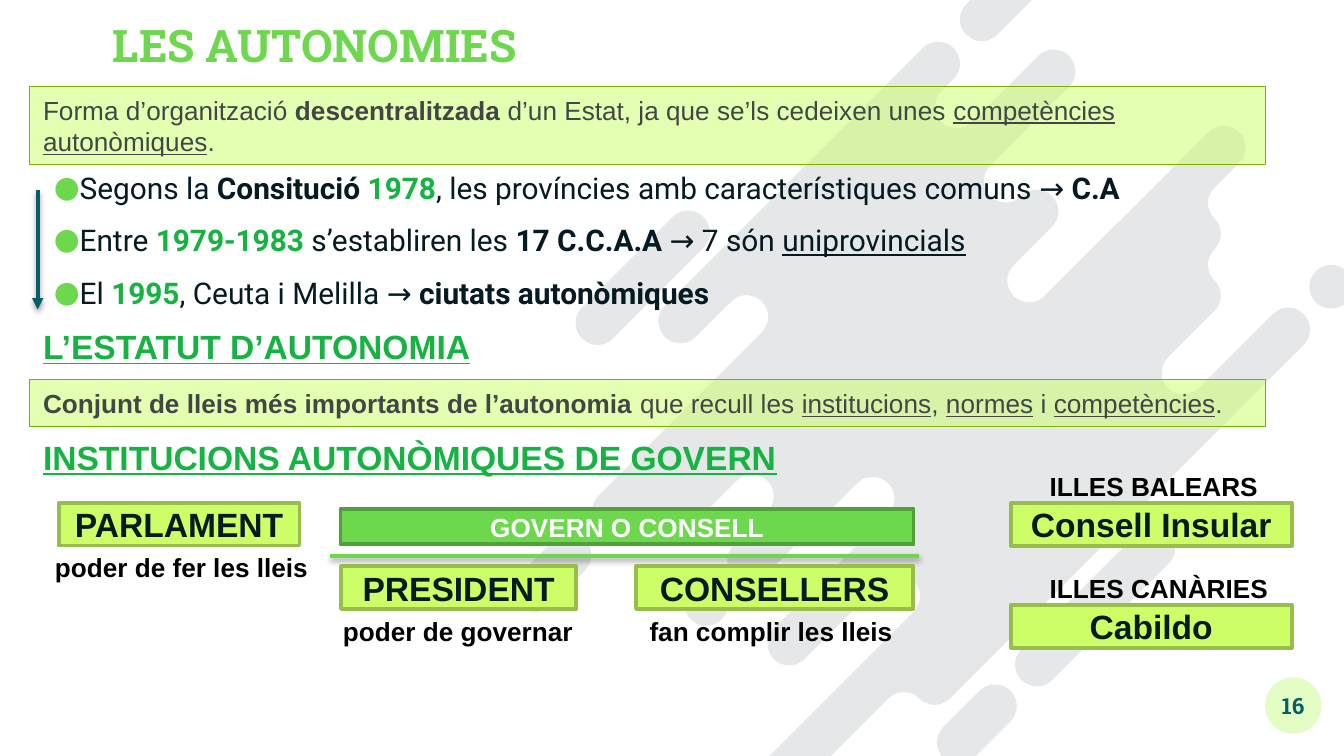
"""Build the slide about the Spanish autonomous communities."""
import pptx
import pptx.dml.color
import pptx.enum.shapes
import pptx.enum.text
import pptx.oxml
import pptx.oxml.ns
import pptx.util

Pt = pptx.util.Pt
SHAPE = pptx.enum.shapes.MSO_SHAPE
ALIGN = pptx.enum.text.PP_ALIGN
ANCHOR = pptx.enum.text.MSO_ANCHOR
INK, GREY, TEAL, LEAF, GRASS = "061A22", "404746", "075E68", "6DD84D", "17B342"
LIME, OLIVE, MOSS = "CCFF67", "97BD4C", "77B300"

DEFINITIONS = [
    (46.3, 41.8, [("Forma d’organització ", ""), ("descentralitzada", "b"),
                  (" d’un Estat, ja que se’ls cedeixen unes ", ""),
                  ("competències autonòmiques", "u"), (".", "")]),
    (203.5, 25, [("Conjunt de lleis més importants de l’autonomia", "b"),
                 (" que recull les ", ""), ("institucions", "u"), (", ", ""),
                 ("normes", "u"), (" i ", ""), ("competències", "u"), (".", "")]),
]
HISTORY = [
    [("Segons la ", ""), ("Consitució ", "b"), ("1978", "bg"),
     (", les províncies amb característiques comuns → ", ""), ("C.A", "b")],
    [("Entre ", ""), ("1979-1983", "bg"), (" s’establiren les ", ""),
     ("17 C.C.A.A", "b"), (" → 7 són ", ""), ("uniprovincials", "u")],
    [("El ", ""), ("1995", "bg"), (", Ceuta i Melilla → ", ""),
     ("ciutats autonòmiques", "b")],
]
HEADINGS = [
    ("L’ESTATUT D’AUTONOMIA", 171.2, 250),
    ("INSTITUCIONS AUTONÒMIQUES DE GOVERN", 230.5, 412.5),
]
INSTITUTIONS = [
    ("PARLAMENT", 31.5, 269.3, 129),
    ("PRESIDENT", 182.7, 303.3, 126),
    ("CONSELLERS", 340.7, 303.3, 148.5),
    ("Consell Insular", 541.5, 269.4, 150.5),
    ("Cabildo", 541.5, 324, 150.5),
]
CAPTIONS = [
    ("poder de fer les lleis", 22.3, 292, 150.5),
    ("poder de governar", 176.6, 326.4, 138.2),
    ("fan complir les lleis", 340.9, 326.4, 151.2),
    ("ILLES BALEARS", 555.3, 248.7, 126.7),
    ("ILLES CANÀRIES", 555.3, 303.3, 132.5),
]

CAPSULES = [
    (704.9, 145.4, 0), (505.4, 389.5, 19.4), (370.1, 315.4, 0), (547.2, 347.8, 62.6),
    (277.9, 308.2, 19), (311.8, 164.9, 48.6), (517.7, 2.2, 27.4),
]
SPLASH = (373.2, 180, [
    (18.4, "RR"), (87.5, "LL"), (6.5, "RL"), (18, "RR"), (18, "LL"), (49.7, "RR"),
    (61.2, "LL"), (41.8, "RR"), (84.6, "LL"), (54.7, "RL"), (189.4, "LL"),
    (39.6, "RR"), (24.8, "LRLR"), (13.3, "LL"), (87.8, "RR"), (20.5, "LLRR"),
    (42.1, "LL"), (35.3, "RR"), (6.5, "LL"), (138.2, "LL"),
])
HALF_CHORD, HANDLE = 8.25, 4.6

deck = pptx.Presentation()
deck.slide_width, deck.slide_height = Pt(720), Pt(405)
page = deck.slides.add_slide(deck.slide_layouts[6])


def rgb(value):
    """Turn a hex string into a colour."""
    return pptx.dml.color.RGBColor.from_string(value)


def parse(xml):
    """Read drawing elements from a fragment."""
    return list(pptx.oxml.parse_xml(f'<a:x {pptx.oxml.ns.nsdecls("a")}>{xml}</a:x>'))


def paint(shape, fill, line=None, width=2, alpha=None):
    """Give a shape its fill, outline and transparency."""
    shape.shadow.inherit = False
    shape.fill.solid()
    shape.fill.fore_color.rgb = rgb(fill)
    if alpha:
        colour = shape.fill._xPr.find(".//" + pptx.oxml.ns.qn("a:srgbClr"))
        colour.extend(parse(f'<a:alpha val="{alpha * 1000}"/>'))
    if line:
        shape.line.color.rgb = rgb(line)
        shape.line.width = Pt(width)
    else:
        shape.line.fill.background()


def write(para, spans, size, color, font="Arial", align=ALIGN.LEFT):
    """Fill a paragraph with runs flagged b, u or g for bold, underlined, green."""
    para.alignment = align
    for text, flags in spans:
        span = para.add_run()
        span.text = text
        span.font.name, span.font.size = font, Pt(size)
        span.font.bold, span.font.underline = "b" in flags, "u" in flags
        span.font.color.rgb = rgb(GRASS if "g" in flags else color)


def add_box(place, fill, line=None, width=2, alpha=None, kind=SHAPE.RECTANGLE):
    """Add a painted shape and return it with its text centred vertically."""
    box = page.shapes.add_shape(kind, *map(Pt, place))
    paint(box, fill, line, width, alpha)
    box.text_frame.vertical_anchor = ANCHOR.MIDDLE
    return box


def add_text(place, wrap=False, inset=True):
    """Add a text box and return its frame."""
    frame = page.shapes.add_textbox(*map(Pt, place)).text_frame
    frame.word_wrap = wrap
    if not inset:
        frame.margin_left = frame.margin_right = frame.margin_top = frame.margin_bottom = 0
    return frame


def add_line(ends, color, arrow=False):
    """Add a straight line with a soft shadow below it."""
    line = page.shapes.add_connector(pptx.enum.shapes.MSO_CONNECTOR.STRAIGHT, *map(Pt, ends))
    line.line.color.rgb = rgb(color)
    line.line.width = Pt(2)
    if arrow:
        line.line._get_or_add_ln().extend(parse('<a:tailEnd type="triangle"/>'))
    line._element.spPr.extend(parse(
        '<a:effectLst><a:outerShdw blurRad="39370" dist="20320" dir="5400000" rotWithShape="0">'
        '<a:srgbClr val="000000"><a:alpha val="38000"/></a:srgbClr></a:outerShdw></a:effectLst>'))


def trace(x, y, steps):
    """Walk diagonals and quarter turns from up-right, listing knots with their handles."""
    knots, dx, dy = [((x, y), None)], 1, -1
    for length, turns in steps:
        x, y = x + dx * length, y + dy * length
        if length:
            knots.append(((x, y), None))
        for turn in turns:
            new_dx, new_dy = (-dy, dx) if turn == "R" else (dy, -dx)
            first = (x + dx * HANDLE, y + dy * HANDLE)
            x, y = x + (dx + new_dx) * HALF_CHORD, y + (dy + new_dy) * HALF_CHORD
            knots.append(((x, y), (first, (x - new_dx * HANDLE, y - new_dy * HANDLE))))
            dx, dy = new_dx, new_dy
    return knots


def add_outline(outlines):
    """Draw closed outlines as one freeform and bend its quarter turns."""
    contours = [[tuple(map(Pt, knot)) for knot, _ in outline] for outline in outlines]
    builder = page.shapes.build_freeform(*contours[0][0])
    for index, contour in enumerate(contours):
        if index:
            builder.move_to(*contour[0])
        builder.add_line_segments(contour[1:], close=True)
    shape = builder.convert_to_shape()
    handles = [pair for outline in outlines for _, pair in outline[1:]]
    segments = list(shape._element.iter(pptx.oxml.ns.qn("a:lnTo")))
    for segment, pair in zip(segments, handles):
        if pair:
            curve = parse("<a:cubicBezTo>" + "".join(
                f'<a:pt x="{Pt(x) - shape.left}" y="{Pt(y) - shape.top}"/>' for x, y in pair)
                + "</a:cubicBezTo>")[0]
            curve.append(segment[0])
            segment.getparent().replace(segment, curve)
    return shape


badge = add_box((677.7, 362.9, 30.2, 30.2), "E4FDC4", kind=SHAPE.OVAL)
badge.text_frame.margin_left = badge.text_frame.margin_right = 0
write(badge.text_frame.paragraphs[0], [("16", "b")], 12, TEAL, "Roboto Slab", ALIGN.CENTER)

capsules = [trace(x, y, [(length, "RR")] * 2) for x, y, length in CAPSULES]
paint(add_outline([trace(*SPLASH)] + capsules), INK, alpha=10)

title = add_text((60.5, 4, 547, 34.6), True, False)
title.vertical_anchor = ANCHOR.BOTTOM
title.paragraphs[0].line_spacing = 0.9
write(title.paragraphs[0], [("LES AUTONOMIES", "b")], 24, LEAF, "Roboto Slab")

for top, height, spans in DEFINITIONS:
    box = add_box((16, top, 662, height), LIME, MOSS, 0.75, 50)
    write(box.text_frame.paragraphs[0], spans, 14, GREY)

history = add_text((28.8, 88, 649, 85), True, False)
for index, spans in enumerate(HISTORY):
    para = history.add_paragraph() if index else history.paragraphs[0]
    para.line_spacing, para.space_before = 1.15, Pt(6)
    write(para, spans, 16, INK, "Roboto")
    properties = para._p.get_or_add_pPr()
    properties.set("marL", str(Pt(13.5)))
    properties.set("indent", str(-Pt(13.5)))
    properties.extend(parse(f'<a:buClr><a:srgbClr val="{LEAF}"/></a:buClr>'
                            '<a:buFont typeface="Roboto"/><a:buChar char="●"/>'))
add_line((20.2, 101.7, 20.2, 165.8), TEAL, True)

for text, top, width in HEADINGS:
    write(add_text((16, top, width, 29)).paragraphs[0], [(text, "bu")], 18, GRASS)

add_line((176.6, 298, 492.5, 298), LEAF)
council = add_box((182.5, 272.7, 307, 19), LEAF, "51A039")
write(council.text_frame.paragraphs[0], [("GOVERN O CONSELL", "b")], 14, "FFFFFF", align=ALIGN.CENTER)
for text, left, top, width in INSTITUTIONS:
    box = add_box((left, top, width, 23), LIME, OLIVE)
    write(box.text_frame.paragraphs[0], [(text, "b")], 18, INK, align=ALIGN.CENTER)
for text, left, top, width in CAPTIONS:
    write(add_text((left, top, width, 24.2)).paragraphs[0], [(text, "b")], 14, "000000")

deck.save("out.pptx")
